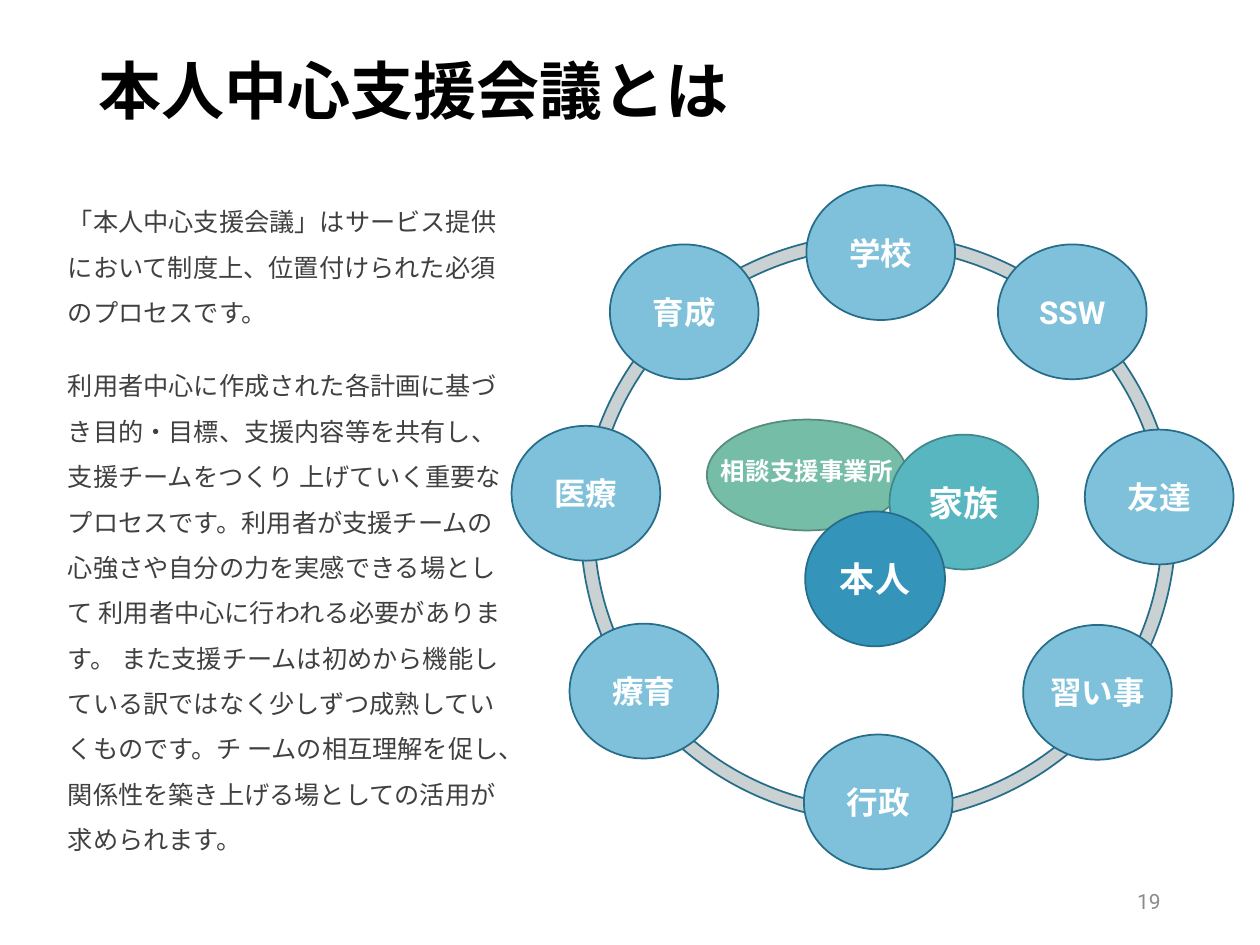
from dataclasses import dataclass

from lxml import etree
from pptx import Presentation
from pptx.dml.color import RGBColor
from pptx.enum.lang import MSO_LANGUAGE_ID
from pptx.enum.shapes import MSO_SHAPE
from pptx.enum.text import MSO_ANCHOR, PP_ALIGN
from pptx.oxml.ns import qn
from pptx.shapes.autoshape import Shape
from pptx.slide import Slide
from pptx.util import Inches, Pt

ELLIPSE, DONUT = MSO_SHAPE.OVAL, MSO_SHAPE.DONUT
MIDDLE, TOP = MSO_ANCHOR.MIDDLE, MSO_ANCHOR.TOP
LEFT, CENTER, RIGHT = PP_ALIGN.LEFT, PP_ALIGN.CENTER, PP_ALIGN.RIGHT
JAPANESE = MSO_LANGUAGE_ID.JAPANESE

BLACK = RGBColor(0x00, 0x00, 0x00)
WHITE = RGBColor(0xFF, 0xFF, 0xFF)
BODY_GRAY = RGBColor(0x40, 0x40, 0x40)
NUMBER_GRAY = RGBColor(0x8C, 0x8C, 0x8C)
RING_GRAY = RGBColor(0xCA, 0xD1, 0xD2)
SKY = RGBColor(0x7F, 0xC1, 0xDB)
BLUE = RGBColor(0x34, 0x94, 0xBA)
DARK_BLUE = RGBColor(0x26, 0x6D, 0x8A)
GREEN = RGBColor(0x75, 0xBD, 0xA7)
DARK_GREEN = RGBColor(0x57, 0x8C, 0x7C)
TEAL = RGBColor(0x58, 0xB6, 0xC0)
DARK_TEAL = RGBColor(0x41, 0x87, 0x8E)

LATIN_FONT = "Roboto"
JAPANESE_FONT = "Noto Sans CJK JP"


@dataclass(frozen=True)
class Box:
    left: float
    top: float
    width: float
    height: float

    def lengths(self) -> list[Inches]:
        return [Inches(n) for n in (self.left, self.top, self.width, self.height)]


@dataclass(frozen=True)
class TextStyle:
    size: float
    color: RGBColor
    bold: bool = False
    font: str = LATIN_FONT
    align: PP_ALIGN = LEFT
    anchor: MSO_ANCHOR = MIDDLE
    line_spacing: float = 1.0
    gap: float = 0


@dataclass(frozen=True)
class Member:
    label: str
    box: Box
    fill: RGBColor = SKY
    outline: RGBColor = DARK_BLUE
    size: float = 18
    bottom_inset: float = 0.05


TITLE = TextStyle(36, BLACK, bold=True, line_spacing=0.9)
BODY = TextStyle(14.4, BODY_GRAY, font=JAPANESE_FONT, anchor=TOP,
                 line_spacing=1.5, gap=16)
PAGE_NUMBER = TextStyle(12, NUMBER_GRAY, align=RIGHT)

EXPLANATION = [
    "「本人中心支援会議」はサービス提供において制度上、位置付けられた必須のプロセスです。",
    "利用者中心に作成された各計画に基づき目的・目標、支援内容等を共有し、"
    "支援チームをつくり 上げていく重要なプロセスです。"
    "利用者が支援チームの心強さや自分の力を実感できる場として "
    "利用者中心に行われる必要があります。 "
    "また支援チームは初めから機能している訳ではなく少しずつ成熟していくものです。"
    "チ ームの相互理解を促し、関係性を築き上げる場としての活用が求められます。",
]

CIRCLE_WIDTH, CIRCLE_HEIGHT = 1.18, 1.07
RING = Box(4.61, 1.86, 4.72, 4.66)
SUPPORTERS = [
    Member(label, Box(left, top, CIRCLE_WIDTH, CIRCLE_HEIGHT))
    for label, left, top in [
        ("学校", 6.4, 1.47),
        ("SSW", 7.92, 1.94),
        ("友達", 8.61, 3.41),
        ("習い事", 8.12, 4.96),
        ("行政", 6.38, 5.83),
        ("育成", 4.84, 1.94),
        ("医療", 4.06, 3.38),
        ("療育", 4.52, 4.95),
    ]
]
CORE = [
    Member("相談支援事業所", Box(5.61, 3.33, 1.59, 0.88), GREEN, DARK_GREEN, 14, 0.11),
    Member("家族", Box(7.06, 3.45, CIRCLE_WIDTH, CIRCLE_HEIGHT), TEAL, DARK_TEAL, 20),
    Member("本人", Box(6.39, 4.06, 1.11, CIRCLE_HEIGHT), BLUE, DARK_BLUE, 20),
]


def write(shape: Shape, lines: list[str], style: TextStyle, wrap: bool = True) -> None:
    frame = shape.text_frame
    frame.text = "\n".join(lines)
    frame.word_wrap = wrap
    frame.vertical_anchor = style.anchor
    for index, paragraph in enumerate(frame.paragraphs):
        paragraph.alignment = style.align
        paragraph.line_spacing = style.line_spacing
        if index:
            paragraph.space_before = Pt(style.gap)
        for run in paragraph.runs:
            run.font.size = Pt(style.size)
            run.font.bold = style.bold
            run.font.name = style.font
            run.font.color.rgb = style.color
            run.font.language_id = JAPANESE
            east_asian = etree.SubElement(run.font._element, qn("a:ea"))
            east_asian.set("typeface", JAPANESE_FONT)


def add_text(slide: Slide, box: Box, lines: list[str], style: TextStyle) -> None:
    write(slide.shapes.add_textbox(*box.lengths()), lines, style)


def add_outlined(slide: Slide, preset: MSO_SHAPE, box: Box,
                 fill: RGBColor, outline: RGBColor) -> Shape:
    shape = slide.shapes.add_shape(preset, *box.lengths())
    shape.shadow.inherit = False
    shape.fill.solid()
    shape.fill.fore_color.rgb = fill
    shape.line.color.rgb = outline
    shape.line.width = Pt(1)
    return shape


def add_member(slide: Slide, member: Member) -> None:
    circle = add_outlined(slide, ELLIPSE, member.box, member.fill, member.outline)
    label_style = TextStyle(member.size, WHITE, bold=True, align=CENTER)
    write(circle, [member.label], label_style, wrap=False)
    circle.text_frame.margin_bottom = Inches(member.bottom_inset)


def main() -> None:
    presentation = Presentation()
    presentation.slide_width = Inches(10)
    presentation.slide_height = Inches(7.5)
    slide = presentation.slides.add_slide(presentation.slide_layouts[6])

    add_text(slide, Box(0.68, 0.02, 8.62, 1.45), ["本人中心支援会議とは"], TITLE)
    add_text(slide, Box(7.06, 6.95, 2.25, 0.4), ["19"], PAGE_NUMBER)

    ring = add_outlined(slide, DONUT, RING, RING_GRAY, DARK_BLUE)
    ring.adjustments[0] = 0.023
    for member in SUPPORTERS + CORE:
        add_member(slide, member)

    add_text(slide, Box(0.44, 1.47, 3.65, 5.67), EXPLANATION, BODY)
    presentation.save("out.pptx")


if __name__ == "__main__":
    main()
